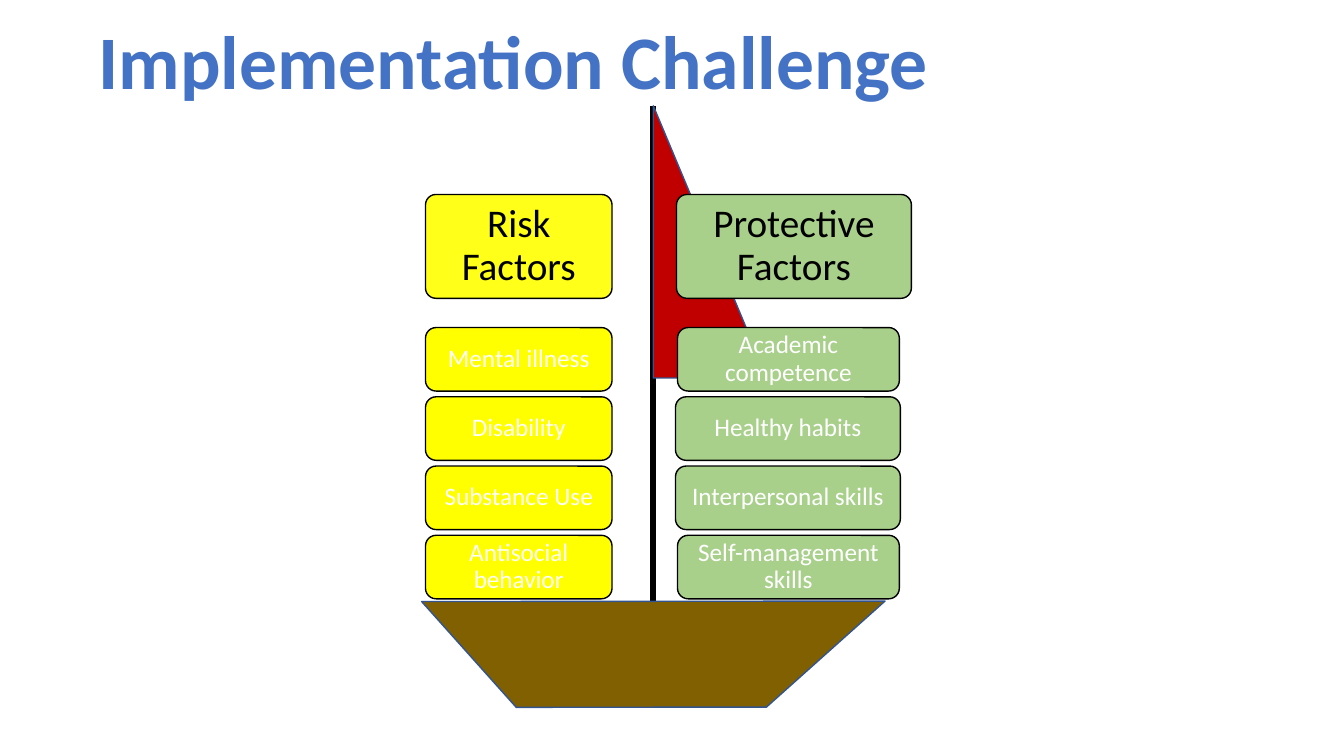
"""Builds a slide showing risk and protective factors as cargo on a sailing boat."""
from dataclasses import dataclass

from lxml import etree
from pptx import Presentation
from pptx.dml.color import RGBColor
from pptx.enum.shapes import MSO_CONNECTOR, MSO_SHAPE
from pptx.enum.text import MSO_ANCHOR, PP_ALIGN
from pptx.oxml.ns import qn
from pptx.util import Inches, Pt

ROUNDED = MSO_SHAPE.ROUNDED_RECTANGLE
STRIPE = MSO_SHAPE.DIAGONAL_STRIPE
TRIANGLE = MSO_SHAPE.RIGHT_TRIANGLE
STRAIGHT = MSO_CONNECTOR.STRAIGHT
CENTER, LEFT = PP_ALIGN.CENTER, PP_ALIGN.LEFT
MIDDLE, BOTTOM = MSO_ANCHOR.MIDDLE, MSO_ANCHOR.BOTTOM

CELL = 0.1
FONT = "Calibri"
COLORS = {
    "title": "4472C4", "black": "000000", "white": "FFFFFF",
    "risk": "FFFF00", "protective": "A8D08B",
    "hull": "806000", "sail": "C00000", "outline": "325491",
}
HEADER_ROW, HEADER_ROWS = 19.3, 10.3
FIRST_ROW, ROW_PITCH, CARD_ROWS = 32.5, 6.87, 6.3


@dataclass
class Card:
    text: str
    col: float
    cols: float


@dataclass
class Stack:
    color: str
    opacity: int
    header: Card
    cards: list[Card]


STACKS = [
    Stack("risk", 90, Card("Risk Factors", 42.2, 18.5), [
        Card("Mental illness", 42.2, 18.5),
        Card("Disability", 42.2, 18.5),
        Card("Substance Use", 42.2, 18.5),
        Card("Antisocial behavior", 42.2, 18.5),
    ]),
    Stack("protective", 100, Card("Protective Factors", 67.1, 23.3), [
        Card("Academic competence", 67.2, 22),
        Card("Healthy habits", 67, 22.3),
        Card("Interpersonal skills", 67, 22.3),
        Card("Self-management skills", 67.2, 22),
    ]),
]


def grid(cells: float) -> int:
    return Inches(cells * CELL)


def rgb(name: str) -> RGBColor:
    return RGBColor.from_string(COLORS[name])


def add_text(sp, text: str, size: int, color: str, align, anchor, bold: bool = False) -> None:
    tf = sp.text_frame
    tf.word_wrap = True
    tf.vertical_anchor = anchor
    tf.text = text
    p = tf.paragraphs[0]
    p.alignment = align
    p.line_spacing = 0.9
    r = p.runs[0]
    r.font.name, r.font.size, r.font.bold = FONT, Pt(size), bold
    r.font.color.rgb = rgb(color)


def add_box(s, kind, col: float, row: float, cols: float, rows: float, fill: str, line: str):
    sp = s.shapes.add_shape(kind, grid(col), grid(row), grid(cols), grid(rows))
    sp.shadow.inherit = False
    sp.fill.solid()
    sp.fill.fore_color.rgb = rgb(fill)
    sp.line.color.rgb = rgb(line)
    sp.line.width = Pt(1)
    return sp


def add_card(s, card: Card, row: float, rows: float, fill: str, size: int, color: str, inset: float):
    sp = add_box(s, ROUNDED, card.col, row, card.cols, rows, fill, "black")
    tf = sp.text_frame
    tf.margin_left = tf.margin_right = tf.margin_top = tf.margin_bottom = grid(inset)
    add_text(sp, card.text, size, color, CENTER, MIDDLE)
    return sp


def add_stack(s, stack: Stack) -> None:
    sp = add_card(s, stack.header, HEADER_ROW, HEADER_ROWS, stack.color, 28, "black", 1.2)
    sp.adjustments[0] = 0.1
    if stack.opacity < 100:
        clr = sp.fill._xPr.find(qn("a:solidFill"))[0]
        etree.SubElement(clr, qn("a:alpha")).set("val", str(stack.opacity * 1000))
    for i, card in enumerate(stack.cards):
        add_card(s, card, FIRST_ROW + i * ROW_PITCH, CARD_ROWS, stack.color, 18, "white", 0.7)


def add_boat(s) -> None:
    mast = s.shapes.add_connector(STRAIGHT, grid(64.8), grid(10.5), grid(64.8), grid(59.7))
    mast.line.color.rgb = rgb("black")
    mast.line.width = Pt(4.5)
    etree.SubElement(mast._element.spPr, qn("a:effectLst"))
    hull = add_box(s, STRIPE, 49.5, 42.5, 30.6, 34.3, "hull", "outline")
    hull.adjustments[0] = 0.54
    hull.rotation = 228.2
    add_box(s, TRIANGLE, 64.8, 10.5, 11.3, 27, "sail", "outline")


def main() -> None:
    prs = Presentation()
    prs.slide_width, prs.slide_height = Inches(13.33), Inches(7.5)
    s = prs.slides.add_slide(prs.slide_layouts[6])
    add_boat(s)
    for stack in STACKS:
        add_stack(s, stack)
    title = s.shapes.add_textbox(grid(8.8), grid(3), grid(115), grid(8))
    add_text(title, "Implementation Challenge", 54, "title", LEFT, BOTTOM, bold=True)
    prs.save("out.pptx")


if __name__ == "__main__":
    main()
